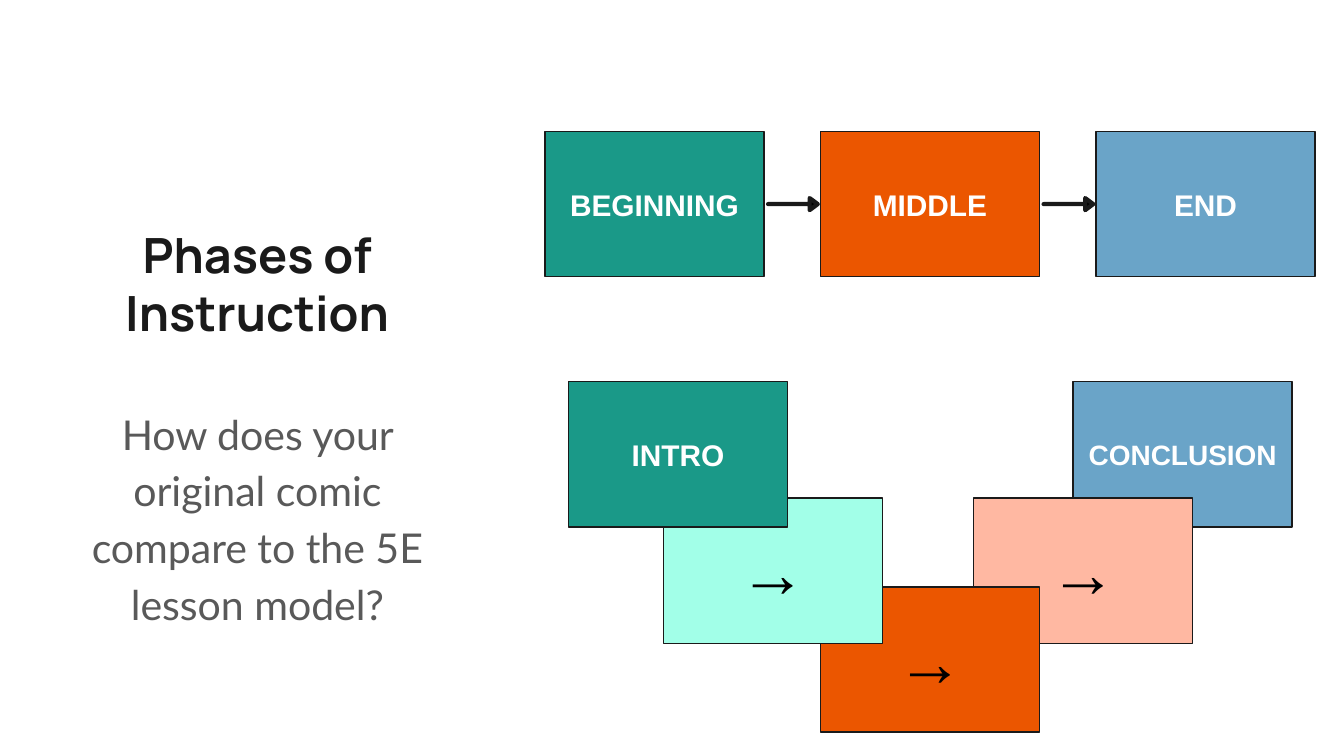
"""Build the phases of instruction slide."""
from dataclasses import dataclass

import pptx
import pptx.dml.color
import pptx.enum.shapes
import pptx.enum.text
import pptx.util

SLIDE_WIDTH = pptx.util.Inches(10)
SLIDE_HEIGHT = SLIDE_WIDTH * 9 // 16
CARD_SIZE = (16.3, 19.2)
TOP_ROW = 17.4
STEP_START, STEP_PITCH = 40.55, 20.5
INK, WHITE, BLACK = "1A1A1A", "FFFFFF", "000000"
TEAL, ORANGE, BLUE, MINT, PEACH = "1A9988", "EB5600", "6AA4C8", "A2FFE8", "FFB8A2"


@dataclass
class Card:
    """A labelled phase, placed in percent of the slide."""

    label: str
    left: float
    top: float
    fill: str
    size: float = 16
    ink: str = WHITE


STEPS = [
    Card(label, STEP_START + column * STEP_PITCH, TOP_ROW, fill)
    for column, (label, fill) in enumerate(
        [("BEGINNING", TEAL), ("MIDDLE", ORANGE), ("END", BLUE)]
    )
]
LESSON = [
    Card("CONCLUSION", 79.85, 50.5, BLUE, 15),
    Card("→", 72.43, 65.9, PEACH, 36, BLACK),
    Card("→", STEP_START + STEP_PITCH, 77.65, ORANGE, 36, BLACK),
    Card("→", 49.35, 65.9, MINT, 36, BLACK),
    Card("INTRO", 42.3, 50.5, TEAL),
]


def rgb(code: str) -> pptx.dml.color.RGBColor:
    """Turn a hex string into a colour."""
    return pptx.dml.color.RGBColor.from_string(code)


def box(left: float, top: float, width: float, height: float) -> tuple[int, ...]:
    """Turn percentages of the slide into lengths."""
    return (
        round(SLIDE_WIDTH * left / 100),
        round(SLIDE_HEIGHT * top / 100),
        round(SLIDE_WIDTH * width / 100),
        round(SLIDE_HEIGHT * height / 100),
    )


def write(shape, text: str, *, size: float, color: str, font: str = "Arial",
          bold: bool = False, spacing: float | None = None) -> None:
    """Put centred, formatted text into a shape."""
    frame = shape.text_frame
    frame.word_wrap = True
    frame.vertical_anchor = pptx.enum.text.MSO_ANCHOR.MIDDLE
    frame.margin_left = frame.margin_right = pptx.util.Inches(0.1)
    frame.margin_top = frame.margin_bottom = pptx.util.Inches(0.1)
    paragraph = frame.paragraphs[0]
    paragraph.alignment = pptx.enum.text.PP_ALIGN.CENTER
    paragraph.line_spacing = spacing
    run = paragraph.add_run()
    run.text = text
    run.font.name = font
    run.font.size = pptx.util.Pt(size)
    run.font.bold = bold
    run.font.color.rgb = rgb(color)


def draw_shape(slide, kind, place: tuple[int, ...], fill: str, line_width: float):
    """Draw a filled and outlined preset shape."""
    shape = slide.shapes.add_shape(kind, *place)
    shape.shadow.inherit = False
    shape.fill.solid()
    shape.fill.fore_color.rgb = rgb(fill)
    shape.line.color.rgb = rgb(INK)
    shape.line.width = pptx.util.Pt(line_width)
    return shape


def draw_card(slide, card: Card) -> None:
    """Draw one phase card."""
    rectangle = pptx.enum.shapes.MSO_SHAPE.RECTANGLE
    shape = draw_shape(slide, rectangle, box(card.left, card.top, *CARD_SIZE), card.fill, 0.75)
    write(shape, card.label, size=card.size, color=card.ink, bold=True)


def draw_step_arrow(slide, before: Card) -> None:
    """Draw the arrow that follows a step."""
    place = box(before.left + CARD_SIZE[0] + 0.3, 26.2, 3.7, 1.6)
    arrow = draw_shape(slide, pptx.enum.shapes.MSO_SHAPE.RIGHT_ARROW, place, BLACK, 2.25)
    arrow.adjustments[0] = 0
    arrow.adjustments[1] = 0.67


def main() -> None:
    """Build and save the slide."""
    deck = pptx.Presentation()
    deck.slide_width, deck.slide_height = SLIDE_WIDTH, SLIDE_HEIGHT
    slide = deck.slides.add_slide(deck.slide_layouts[6])
    for card in STEPS + LESSON:
        draw_card(slide, card)
    for step in STEPS[:-1]:
        draw_step_arrow(slide, step)
    question = slide.shapes.add_textbox(*box(5.55, 47, 27.2, 42.3))
    write(question, "How does your original comic compare to the 5E lesson model?",
          size=22, color="595959", font="Lato", spacing=1.15)
    title = slide.shapes.add_textbox(*box(6.85, 27.8, 24.6, 19.2))
    write(title, "Phases of Instruction", size=26, color=INK, font="Manrope", bold=True)
    deck.save("out.pptx")


if __name__ == "__main__":
    main()
